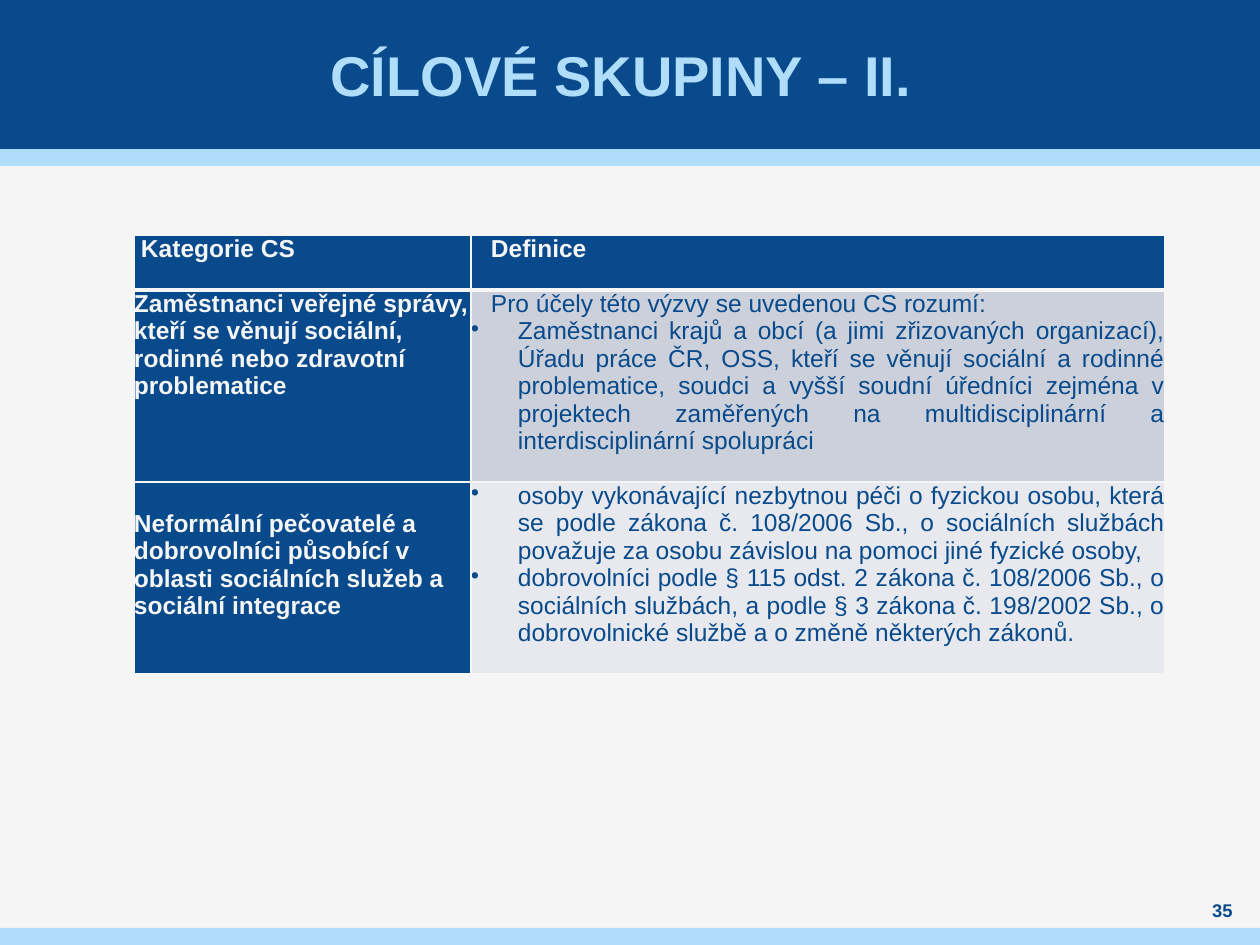
from lxml import etree
from pptx import Presentation
from pptx import util as u
from pptx.dml.color import RGBColor
from pptx.enum import shapes, text
from pptx.oxml import ns

NAVY = RGBColor(0x08, 0x4A, 0x8B)
SKY = RGBColor(0xAF, 0xDD, 0xFA)
PAPER = RGBColor(0xF5, 0xF5, 0xF5)
ROW_DARK = RGBColor(0xCC, 0xD0, 0xDA)
ROW_LIGHT = RGBColor(0xE7, 0xE9, 0xEE)

SCALE = 914400 // 126
WIDTH, HEIGHT = 1260, 945
FONT = "Arial"
LEFT, JUSTIFY, CENTER = text.PP_ALIGN.LEFT, text.PP_ALIGN.JUSTIFY, text.PP_ALIGN.CENTER
PLAIN, INSET, INDENTED, BULLET = (0, 0, LEFT), (7, 0, LEFT), (20, 0, JUSTIFY), (47, -47, JUSTIFY)

COLUMN_WIDTHS = (337, 694)
ROW_HEIGHTS = (55, 192, 192)
GROUPS = [
    ([(INSET, "Kategorie CS")], [(INDENTED, "Definice")]),
    (
        [(PLAIN, "Zaměstnanci veřejné správy, kteří se věnují sociální, rodinné nebo zdravotní problematice")],
        [
            (INDENTED, "Pro účely této výzvy se uvedenou CS rozumí:"),
            (BULLET, "Zaměstnanci krajů a obcí (a jimi zřizovaných organizací), Úřadu práce ČR, OSS, "
                     "kteří se věnují sociální a rodinné problematice, soudci a vyšší soudní úředníci "
                     "zejména v projektech zaměřených na multidisciplinární a interdisciplinární spolupráci"),
        ],
    ),
    (
        [(PLAIN, "Neformální pečovatelé a dobrovolníci působící v oblasti sociálních služeb a sociální integrace")],
        [
            (BULLET, "osoby vykonávající nezbytnou péči o fyzickou osobu, která se podle zákona "
                     "č. 108/2006 Sb., o sociálních službách považuje za osobu závislou na pomoci "
                     "jiné fyzické osoby,"),
            (BULLET, "dobrovolníci podle § 115 odst. 2 zákona č. 108/2006 Sb., o sociálních službách, "
                     "a podle § 3 zákona č. 198/2002 Sb., o dobrovolnické službě a o změně některých zákonů."),
        ],
    ),
]
DEFINITION_FILLS = (NAVY, ROW_DARK, ROW_LIGHT)
CATEGORY_TOPS = (0, 0, 28)


def px(length):
    return u.Emu(length * SCALE)


def set_all(target, values):
    for key, value in values.items():
        setattr(target, key, value)


def place(shape, box):
    set_all(shape, dict(zip(("left", "top", "width", "height"), map(px, box))))


def write(paragraph, wording, size, colour, bold, align):
    paragraph.alignment = align
    run = paragraph.add_run()
    run.text = wording
    set_all(run.font, {"name": FONT, "size": u.Pt(size), "bold": bold})
    run.font.color.rgb = colour


def format_frame(frame, side=0):
    set_all(frame, {
        "margin_left": px(side), "margin_right": px(side), "margin_top": 0, "margin_bottom": 0,
        "word_wrap": True, "vertical_anchor": text.MSO_ANCHOR.MIDDLE,
        "auto_size": text.MSO_AUTO_SIZE.NONE,
    })


def indent(paragraph, style):
    margin, first_line, _ = style
    properties = paragraph._p.get_or_add_pPr()
    properties.set("marL", str(px(margin)))
    properties.set("indent", str(px(first_line)))
    if style is BULLET:
        etree.SubElement(properties, ns.qn("a:buChar")).set("char", "•")


def add_borders(cell, bottom_width):
    properties = cell._tc.get_or_add_tcPr()
    widths = {"a:lnL": 1, "a:lnR": 1, "a:lnT": 1, "a:lnB": bottom_width}
    for position, (side, width) in enumerate(widths.items()):
        line = etree.Element(ns.qn(side), w=str(u.Pt(width)))
        fill = etree.SubElement(line, ns.qn("a:solidFill"))
        etree.SubElement(fill, ns.qn("a:srgbClr"), val=str(PAPER))
        properties.insert(position, line)


def fill_cell(cell, paragraphs, fill, colour, bold, top, bottom_width):
    set_all(cell, {"margin_left": 0, "margin_right": 0, "margin_top": px(top), "margin_bottom": 0,
                   "vertical_anchor": text.MSO_ANCHOR.TOP})
    cell.fill.solid()
    cell.fill.fore_color.rgb = fill
    frame = cell.text_frame
    for number, (style, wording) in enumerate(paragraphs):
        paragraph = frame.add_paragraph() if number else frame.paragraphs[0]
        write(paragraph, wording, 14, colour, bold, style[2])
        indent(paragraph, style)
    add_borders(cell, bottom_width)


def add_bands(slide):
    bands = [((0, 149, WIDTH, 17), SKY), ((0, 0, WIDTH, 149), NAVY), ((0, 928, WIDTH, 17), SKY)]
    for box, colour in bands:
        band = slide.shapes.add_shape(shapes.MSO_SHAPE.RECTANGLE, *map(px, box))
        band.shadow.inherit = False
        band.fill.solid()
        band.fill.fore_color.rgb = colour
        band.line.fill.background()
        slide.shapes.title.element.addprevious(band.element)


def add_title(slide, box):
    title = slide.shapes.title
    place(title, box)
    format_frame(title.text_frame, side=5)
    write(title.text_frame.paragraphs[0], "CÍLOVÉ SKUPINY – II. ", 32, SKY, True, CENTER)


def add_groups_table(slide, left, top):
    box = (left, top, sum(COLUMN_WIDTHS), sum(ROW_HEIGHTS))
    table = slide.shapes.add_table(len(GROUPS), len(COLUMN_WIDTHS), *map(px, box)).table
    for column, width in zip(table.columns, COLUMN_WIDTHS):
        column.width = px(width)
    for index, (category, definition) in enumerate(GROUPS):
        table.rows[index].height = px(ROW_HEIGHTS[index])
        header = index == 0
        bottom_width = 3 if header else 1
        fill_cell(table.cell(index, 0), category, NAVY, PAPER, True, CATEGORY_TOPS[index], bottom_width)
        fill_cell(table.cell(index, 1), definition, DEFINITION_FILLS[index],
                  PAPER if header else NAVY, header, 0, bottom_width)


def add_page_number(slide, box):
    frame = slide.shapes.add_textbox(*map(px, box)).text_frame
    format_frame(frame)
    write(frame.paragraphs[0], "35", 10.5, NAVY, True, CENTER)


def main():
    deck = Presentation()
    set_all(deck, {"slide_width": px(WIDTH), "slide_height": px(HEIGHT)})
    slide = deck.slides.add_slide(deck.slide_layouts[5])
    slide.background.fill.solid()
    slide.background.fill.fore_color.rgb = PAPER
    add_bands(slide)
    add_title(slide, (49, 0, 1160, 149))
    add_groups_table(slide, 134, 235)
    add_page_number(slide, (1190, 898, 65, 25))
    deck.save("out.pptx")


if __name__ == "__main__":
    main()
